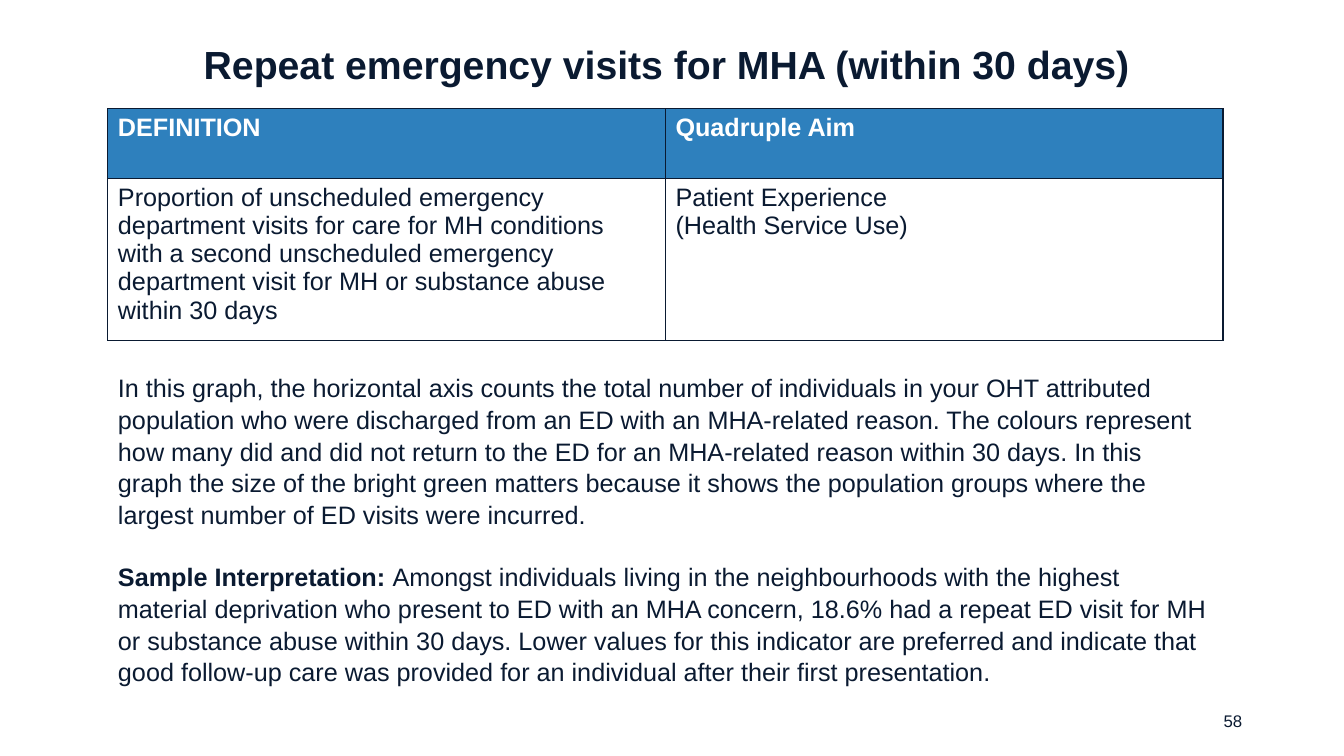
from pptx import Presentation
from pptx.dml.color import RGBColor
from pptx.enum.text import MSO_ANCHOR, MSO_AUTO_SIZE, PP_ALIGN
from pptx.oxml import parse_xml
from pptx.oxml.ns import nsdecls
from pptx.util import Inches, Pt

NAVY, BLUE, WHITE = "0A1A31", "2E80BD", "FFFFFF"
LEFT, WIDTH = 1.07, 11.06


def style(font, size, hue=NAVY, bold=False):
    look = {"name": "Arial", "size": Pt(size), "bold": bold}
    for key, value in look.items():
        setattr(font, key, value)
    font.color.rgb = RGBColor.from_string(hue)


def place(shape, *box):
    for key, value in zip(("left", "top", "width", "height"), box):
        setattr(shape, key, Inches(value))


deck = Presentation()
deck.slide_width, deck.slide_height = Inches(13.33), Inches(7.5)
slide = deck.slides.add_slide(deck.slide_layouts[1])

# Title
title = slide.shapes.title
place(title, 0.71, 0.24, 11.8, 0.84)
frame = title.text_frame
frame.text = "Repeat emergency visits for MHA (within 30 days)"
frame.vertical_anchor = MSO_ANCHOR.MIDDLE
frame.auto_size = MSO_AUTO_SIZE.NONE
head = frame.paragraphs[0]
head.alignment, head.line_spacing = PP_ALIGN.CENTER, 0.9
style(head.font, 28, bold=True)

# Definition table
rows = [
    ("DEFINITION", "Quadruple Aim"),
    ("Proportion of unscheduled emergency department visits for care for MH "
     "conditions with a second unscheduled emergency department visit for MH "
     "or substance abuse within 30 days",
     "Patient Experience\n(Health Service Use)"),
]
grid = slide.shapes.add_table(2, 2, Inches(LEFT), Inches(1.08),
                              Inches(WIDTH), Inches(2.3)).table
for row, high in zip(grid.rows, (0.69, 1.61)):
    row.height = Inches(high)
for r, texts in enumerate(rows):
    for c, text in enumerate(texts):
        cell = grid.cell(r, c)
        cell.text = text
        for para in cell.text_frame.paragraphs:
            style(para.font, 18, NAVY if r else WHITE, bold=not r)
        props = cell._tc.get_or_add_tcPr()
        for side in ("lnL", "lnR", "lnT", "lnB"):
            props.append(parse_xml(
                f'<a:{side} {nsdecls("a")} w="12700"><a:solidFill>'
                f'<a:srgbClr val="{NAVY}"/></a:solidFill></a:{side}>'))
        cell.fill.solid()
        cell.fill.fore_color.rgb = RGBColor.from_string(WHITE if r else BLUE)

# Explanation
notes = [
    ("", "In this graph, the horizontal axis counts the total number of "
     "individuals in your OHT attributed population who were discharged from "
     "an ED with an MHA-related reason. The colours represent how many did "
     "and did not return to the ED for an MHA-related reason within 30 days. "
     "In this graph the size of the bright green matters because it shows "
     "the population groups where the largest number of ED visits were "
     "incurred."),
    ("Sample Interpretation: ",
     "Amongst individuals living in the neighbourhoods with the highest "
     "material deprivation who present to ED with an MHA concern, 18.6% had "
     "a repeat ED visit for MH or substance abuse within 30 days. Lower "
     "values for this indicator are preferred and indicate that good "
     "follow-up care was provided for an individual after their first "
     "presentation."),
]
body = slide.placeholders[1]
place(body, LEFT, 3.63, WIDTH, 3.13)
frame = body.text_frame
frame.auto_size = MSO_AUTO_SIZE.NONE
for i, (lead, text) in enumerate(notes):
    para = frame.add_paragraph() if i else frame.paragraphs[0]
    props = para._p.get_or_add_pPr()
    props.set("marL", "0")
    props.set("indent", "0")
    props.append(parse_xml(f'<a:buNone {nsdecls("a")}/>'))
    para.space_before = Pt(21.6 * i)
    para.line_spacing = 1.05
    for words, bold in ((lead, True), (text, False)):
        if words:
            run = para.add_run()
            run.text = words
            style(run.font, 18, bold=bold)

# Page number
page = slide.shapes.add_textbox(0, 0, 0, 0)
place(page, 9.42, 6.95, 3, 0.4)
frame = page.text_frame
frame.word_wrap = True
frame.vertical_anchor = MSO_ANCHOR.MIDDLE
frame.text = "58"
frame.paragraphs[0].alignment = PP_ALIGN.RIGHT
style(frame.paragraphs[0].font, 12)

deck.save("out.pptx")
